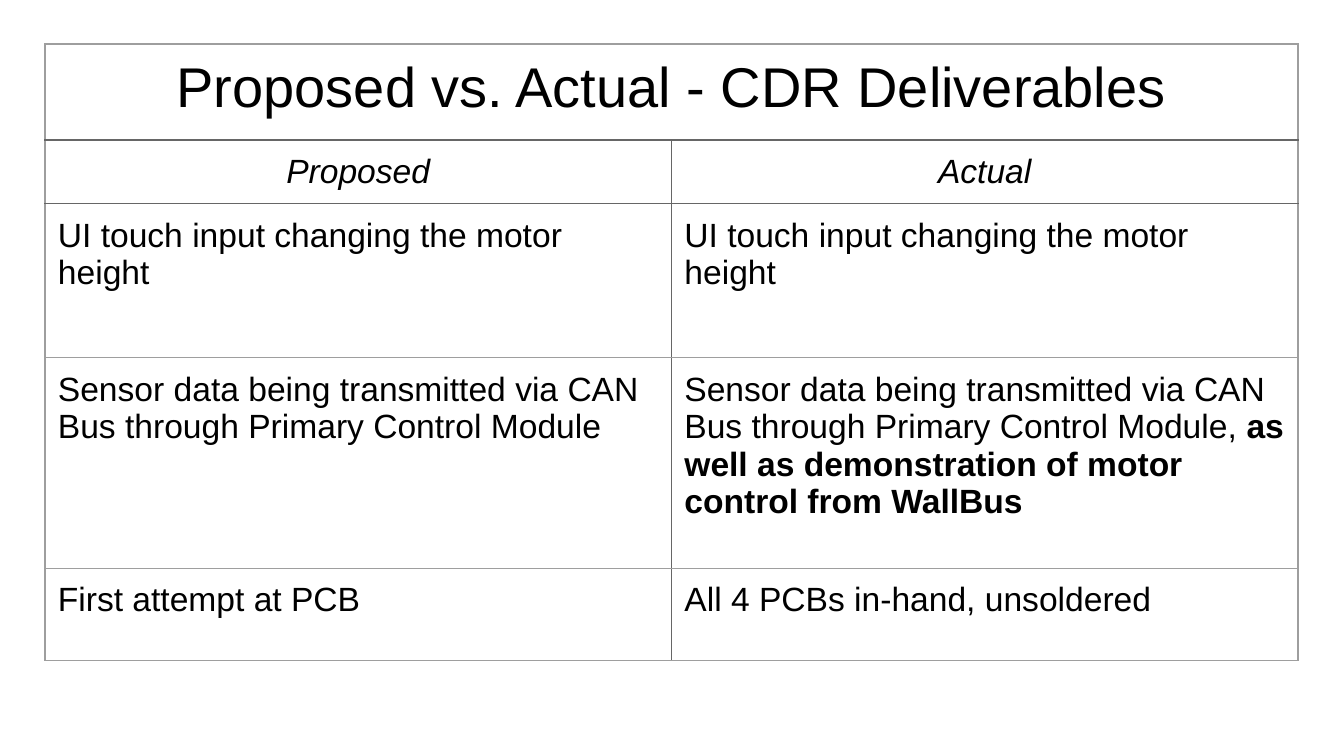
from dataclasses import dataclass

from lxml.etree import SubElement
from pptx import Presentation
from pptx.dml.color import RGBColor
from pptx.enum.text import PP_ALIGN as Align
from pptx.oxml.ns import qn
from pptx.util import Pt

PX = 914400 / 134.4


def px(length):
    return round(length * PX)


@dataclass(frozen=True)
class Theme:
    font: str = "Arial"
    ink: str = "000000"
    outer_line: str = "9E9E9E"
    inner_line: str = "666666"
    line_width: float = 0.75
    title_size: int = 30
    body_size: int = 18


THEME = Theme()
CELL_MARGIN = 13
ROW_HEIGHTS = [96, 58, 154, 211, 92]
TITLE = "Proposed vs. Actual - CDR Deliverables"
HEADINGS = ("Proposed", "Actual")
# Each entry is the plain wording, then any wording to stress in bold.
DELIVERABLES = [
    (("UI touch input changing the motor height",),
     ("UI touch input changing the motor height",)),
    (("Sensor data being transmitted via CAN Bus through Primary Control Module",),
     ("Sensor data being transmitted via CAN Bus through Primary Control Module, ",
      "as well as demonstration of motor control from WallBus")),
    (("First attempt at PCB",),
     ("All 4 PCBs in-hand, unsoldered",)),
]


def rule_cell(cell, colours):
    """Draw the left, right, top and bottom borders, in that order."""
    properties = cell._tc.get_or_add_tcPr()
    for side, colour in zip("LRTB", colours):
        line = SubElement(properties, qn(f"a:ln{side}"), w=str(Pt(THEME.line_width)))
        SubElement(SubElement(line, qn("a:solidFill")), qn("a:srgbClr"), val=colour)


def write_cell(cell, wording, size, align=Align.LEFT, italic=False):
    cell.margin_left = cell.margin_right = px(CELL_MARGIN)
    cell.margin_top = cell.margin_bottom = px(CELL_MARGIN)
    cell.fill.background()
    paragraph = cell.text_frame.paragraphs[0]
    paragraph.alignment = align
    for index, words in enumerate(wording):
        run = paragraph.add_run()
        run.text = words
        run.font.name = THEME.font
        run.font.size = Pt(size)
        run.font.color.rgb = RGBColor.from_string(THEME.ink)
        run.font.bold = index > 0
        run.font.italic = italic


def add_comparison(slide, left, top, width):
    row_count = len(ROW_HEIGHTS)
    table = slide.shapes.add_table(
        row_count, 2, px(left), px(top), px(width), px(sum(ROW_HEIGHTS))).table
    table.first_row = table.horz_banding = False
    for row, height in zip(table.rows, ROW_HEIGHTS):
        row.height = px(height)
    for column in table.columns:
        column.width = px(width / 2)

    outer, inner = THEME.outer_line, THEME.inner_line
    # The title and heading rows are closed by the darker rule.
    row_rules = [outer, inner, inner] + [outer] * (row_count - 2)
    for row in range(row_count):
        middle = inner if row else outer
        for column, sides in enumerate([(outer, middle), (middle, outer)]):
            rule_cell(table.cell(row, column), (*sides, *row_rules[row:row + 2]))

    title_cell = table.cell(0, 0)
    title_cell.merge(table.cell(0, 1))
    write_cell(title_cell, (TITLE,), THEME.title_size, Align.CENTER)
    table.cell(0, 1).fill.background()
    for column, heading in enumerate(HEADINGS):
        write_cell(table.cell(1, column), (heading,), THEME.body_size,
                   Align.CENTER, italic=True)
    for row, pair in enumerate(DELIVERABLES, start=2):
        for column, wording in enumerate(pair):
            write_cell(table.cell(row, column), wording, THEME.body_size)


def main():
    deck = Presentation()
    deck.slide_width, deck.slide_height = px(1344), px(756)
    slide = deck.slides.add_slide(deck.slide_layouts[6])
    add_comparison(slide, left=45, top=44, width=1253)
    deck.save("out.pptx")


if __name__ == "__main__":
    main()
